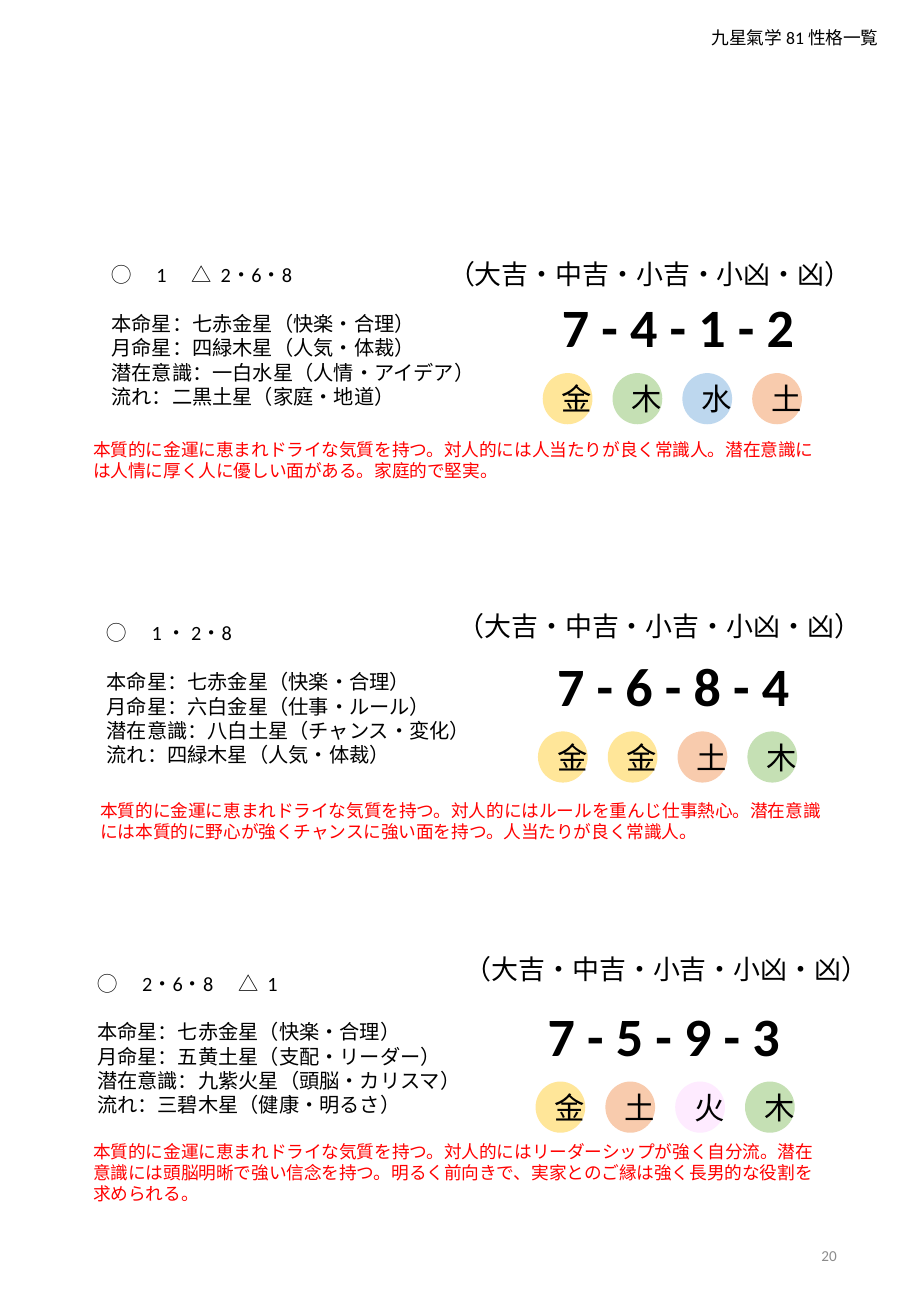
from pptx import Presentation
from pptx.dml.color import RGBColor
from pptx.enum.shapes import MSO_SHAPE
from pptx.enum.text import MSO_ANCHOR, MSO_AUTO_SIZE, PP_ALIGN
from pptx.util import Cm, Pt

OVAL = MSO_SHAPE.OVAL
TOP, MIDDLE = MSO_ANCHOR.TOP, MSO_ANCHOR.MIDDLE
LEFT, CENTER, RIGHT = PP_ALIGN.LEFT, PP_ALIGN.CENTER, PP_ALIGN.RIGHT
GROW, FIXED = MSO_AUTO_SIZE.SHAPE_TO_FIT_TEXT, MSO_AUTO_SIZE.NONE

FONT = "Calibri"
COLORS = {
    "text": "000000", "note": "FF0000", "page": "8C8C8C",
    "金": "FFE699", "木": "C5E0B4", "水": "BDD7EE", "土": "F8CBAD", "火": "FEEBFF",
}
LUCK = "（大吉・中吉・小吉・小凶・凶）"
STEP = 1.46  # distance between element circles


class Page:
    def __init__(self, deck):
        self.slide = deck.slides.add_slide(deck.slide_layouts[5])
        self.host = self.slide.shapes

    def group(self):
        self.host = self.slide.shapes.add_group_shape().shapes

    def style(self, frame, lines, size, color="text", bold=False, align=LEFT, anchor=TOP):
        frame.word_wrap = True
        frame.vertical_anchor = anchor
        frame.text = "\n".join(lines)
        for para in frame.paragraphs:
            para.alignment = align
            font = para.font
            font.name, font.size, font.bold = FONT, Pt(size), bold
            font.color.rgb = RGBColor.from_string(COLORS[color])

    def title(self, text, x, y, w, h):
        box = self.slide.shapes.title
        box.left, box.top, box.width, box.height = Cm(x), Cm(y), Cm(w), Cm(h)
        self.style(box.text_frame, [text], 10.5)
        box.text_frame.auto_size = FIXED

    def text(self, lines, x, y, w, h, size, fit=GROW, **look):
        frame = self.host.add_textbox(Cm(x), Cm(y), Cm(w), Cm(h)).text_frame
        self.style(frame, lines, size, **look)
        frame.auto_size = fit
        return frame

    def circle(self, mark, x, y):
        dot = self.host.add_shape(OVAL, Cm(x), Cm(y), Cm(1.04), Cm(1.07))
        dot.shadow.inherit = False
        dot.fill.solid()
        dot.fill.fore_color.rgb = RGBColor.from_string(COLORS[mark])
        dot.line.fill.background()
        self.style(dot.text_frame, [mark], 18, align=CENTER, anchor=MIDDLE)

    def reading(self, stars, spot, code, marks, start, note, place, luck):
        self.group()
        x, y = spot
        # Stars, with a gap below the first line
        frame = self.text(stars, x, y, 8.3, 3.33, 12)
        frame.paragraphs[0].space_after = Pt(14.6)
        # Number code and element circles
        self.text([code], x + 9.42, y + 0.66, 6.4, 1.63, 32, bold=True)
        for i, mark in enumerate(marks):
            self.circle(mark, start + i * STEP, y + 2.44)
        # Character note and luck scale
        self.text([note], *place, 15.9, 1.14, 10.5, color="note")
        self.text([LUCK], *luck, 9.07, 0.94, 16)


READINGS = [
    dict(
        stars=["◯　 1 　△  2・6・8", "本命星：七赤金星（快楽・合理）", "月命星：四緑木星（人気・体裁）",
               "潜在意識：一白水星（人情・アイデア）", "流れ：二黒土星（家庭・地道）"],
        spot=(2.08, 5.36), code="7 - 4 - 1 - 2", marks="金木水土", start=11.35,
        note="本質的に金運に恵まれドライな気質を持つ。対人的には人当たりが良く常識人。"
             "潜在意識には人情に厚く人に優しい面がある。家庭的で堅実。",
        place=(1.7, 9.04), luck=(9.12, 5.26)),
    dict(
        stars=["◯　 1 ・ 2・8", "本命星：七赤金星（快楽・合理）", "月命星：六白金星（仕事・ルール）",
               "潜在意識：八白土星（チャンス・変化）", "流れ：四緑木星（人気・体裁）"],
        spot=(1.98, 12.85), code="7 - 6 - 8 - 4", marks="金金土木", start=11.25,
        note="本質的に金運に恵まれドライな気質を持つ。対人的にはルールを重んじ仕事熱心。"
             "潜在意識には本質的に野心が強くチャンスに強い面を持つ。人当たりが良く常識人。",
        place=(1.85, 16.59), luck=(9.32, 12.62)),
    dict(
        stars=["◯　 2・6・8 　△  1", "本命星：七赤金星（快楽・合理）", "月命星：五黄土星（支配・リーダー）",
               "潜在意識：九紫火星（頭脳・カリスマ）", "流れ：三碧木星（健康・明るさ）"],
        spot=(1.78, 20.17), code="7 - 5 - 9 - 3", marks="金土火木", start=11.2,
        note="本質的に金運に恵まれドライな気質を持つ。対人的にはリーダーシップが強く自分流。"
             "潜在意識には頭脳明晰で強い信念を持つ。明るく前向きで、実家とのご縁は強く"
             "長男的な役割を求められる。",
        place=(1.7, 23.72), luck=(9.47, 19.79)),
]


def main():
    deck = Presentation()
    deck.slide_width, deck.slide_height = Cm(19.05), Cm(27.51)
    page = Page(deck)
    # Header and page number
    page.title("九星氣学 81 性格一覧", 14.63, 0.43, 4.06, 0.71)
    page.text(["20"], 13.46, 25.5, 4.29, 1.47, 9, fit=FIXED,
              color="page", align=RIGHT, anchor=MIDDLE)
    # Three readings
    for item in READINGS:
        page.reading(**item)
    deck.save("out.pptx")


if __name__ == "__main__":
    main()
